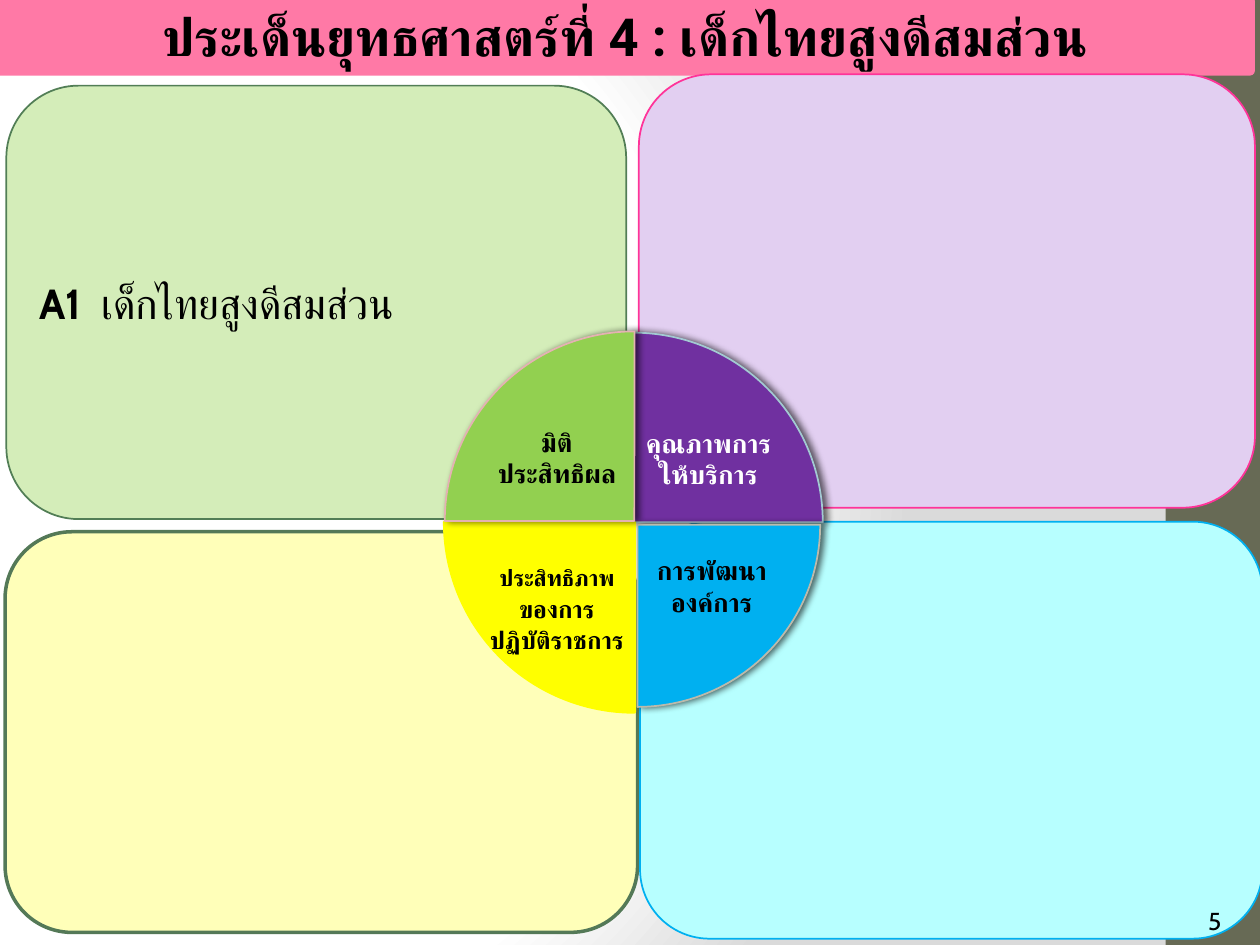
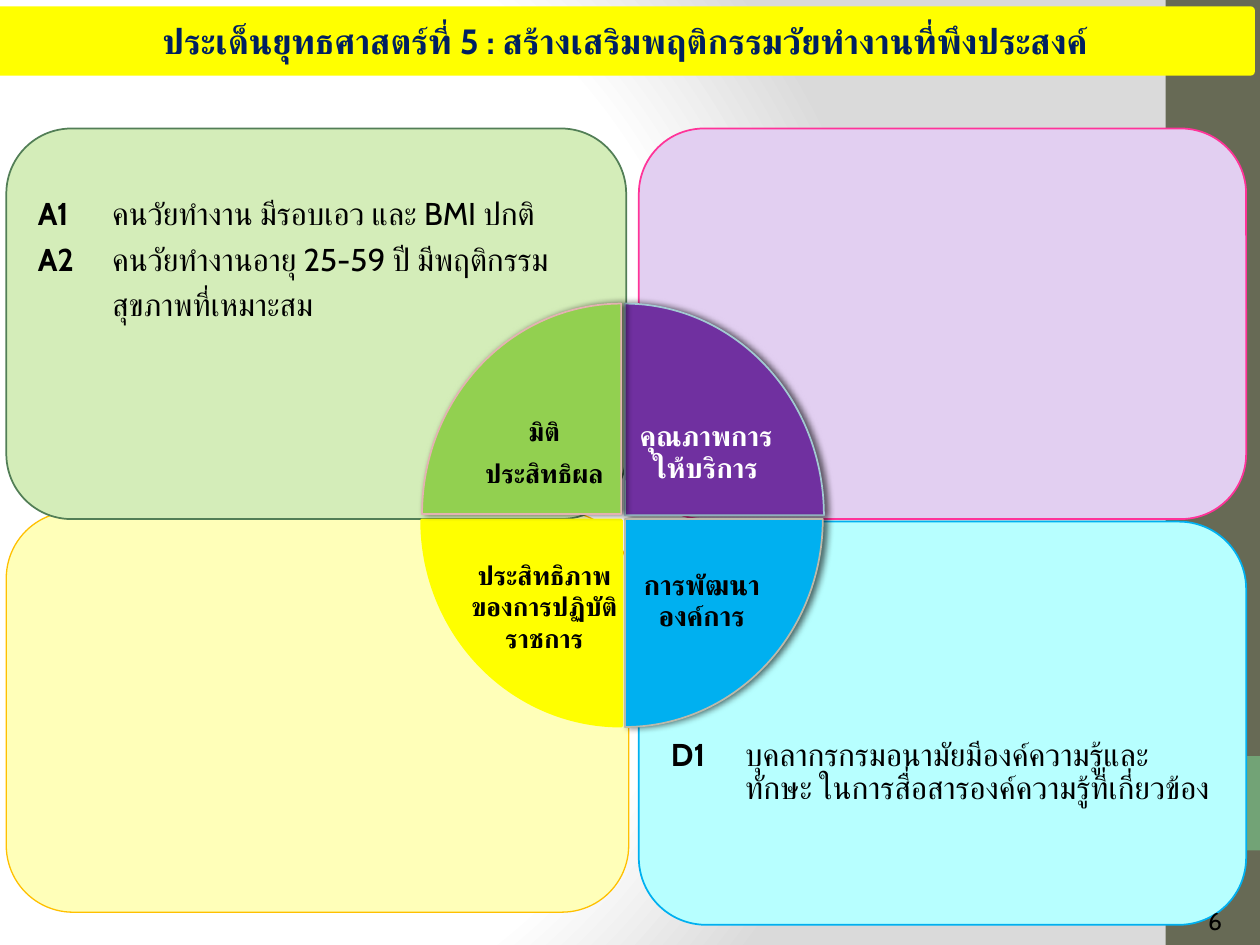
from dataclasses import dataclass
from typing import Optional

from lxml import etree
from pptx import Presentation
from pptx.dml.color import RGBColor
from pptx.enum.shapes import MSO_SHAPE
from pptx.enum.text import MSO_ANCHOR, MSO_AUTO_SIZE, PP_ALIGN
from pptx.oxml import parse_xml
from pptx.oxml.ns import nsdecls, qn
from pptx.util import Inches, Pt

RECTANGLE = MSO_SHAPE.RECTANGLE
ROUNDED = MSO_SHAPE.ROUNDED_RECTANGLE
PIE = MSO_SHAPE.PIE
TOP, MIDDLE = MSO_ANCHOR.TOP, MSO_ANCHOR.MIDDLE
LEFT, CENTER = PP_ALIGN.LEFT, PP_ALIGN.CENTER
NO_AUTOFIT = MSO_AUTO_SIZE.NONE

BLACK = RGBColor(0x00, 0x00, 0x00)
WHITE = RGBColor(0xFF, 0xFF, 0xFF)
NAVY = RGBColor(0x00, 0x20, 0x60)
OLIVE = RGBColor(0x67, 0x6A, 0x55)
SAGE = RGBColor(0x72, 0xA3, 0x76)
PINK = RGBColor(0xFF, 0x79, 0xA6)
HOT_PINK = RGBColor(0xFF, 0x33, 0x99)
YELLOW = RGBColor(0xFF, 0xFF, 0x00)
AMBER = RGBColor(0xFF, 0xC0, 0x00)
CREAM = RGBColor(0xFF, 0xFF, 0xB9)
MOSS = RGBColor(0x54, 0x79, 0x57)
FOREST = RGBColor(0x52, 0x7E, 0x56)
MINT = RGBColor(0xD4, 0xED, 0xB9)
LILAC = RGBColor(0xE2, 0xCF, 0xF1)
ICE = RGBColor(0xB7, 0xFF, 0xFF)
BLUE = RGBColor(0x00, 0xB0, 0xF0)
PURPLE = RGBColor(0x70, 0x30, 0xA0)
GREEN = RGBColor(0x92, 0xD0, 0x50)
PALE_BLUE = RGBColor(0xA3, 0xC9, 0xD3)
STONE = RGBColor(0xBC, 0xBA, 0xAB)
ROSE = RGBColor(0xE4, 0xB2, 0xB2)

SLIDE_WIDTH, SLIDE_HEIGHT = Inches(10), Inches(7.5)
COLUMNS, ROWS = 100, 75
BODY_FONT, HEADLINE_FONT = "Cabin", "Roboto"
TITLE_ONLY = 5
LABEL_HEIGHT = 9


@dataclass(frozen=True)
class Box:
    column: float
    row: float
    columns: float
    rows: float

    def lengths(self) -> tuple[int, int, int, int]:
        return (
            round(SLIDE_WIDTH * self.column / COLUMNS),
            round(SLIDE_HEIGHT * self.row / ROWS),
            round(SLIDE_WIDTH * self.columns / COLUMNS),
            round(SLIDE_HEIGHT * self.rows / ROWS),
        )


@dataclass(frozen=True)
class Style:
    size: float
    color: RGBColor = BLACK
    bold: bool = True
    font: str = BODY_FONT


@dataclass(frozen=True)
class Headline:
    text: str
    box: Box
    fill: RGBColor
    style: Style


@dataclass(frozen=True)
class Panel:
    box: Box
    fill: RGBColor
    line: RGBColor
    line_width: float = 1
    entries: tuple[tuple[str, str], ...] = ()
    size: float = 18
    hanging: float = 0.59
    spacing: Optional[float] = None
    top_inset: Optional[float] = None


@dataclass(frozen=True)
class Quadrant:
    start: int
    end: int
    fill: RGBColor
    line: RGBColor
    line_width: float = 1
    shadow: bool = True
    text_color: RGBColor = BLACK


@dataclass(frozen=True)
class Label:
    center_column: float
    center_row: float
    lines: tuple[tuple[tuple[str, float], ...], ...]


@dataclass(frozen=True)
class StrategyPage:
    number: int
    headline: Headline
    side_blocks: tuple[tuple[Box, RGBColor], ...]
    back_panels: tuple[Panel, ...]
    front_panels: tuple[Panel, ...]
    pie_boxes: tuple[Box, ...]
    labels: tuple[Label, ...]
    label_width: float


QUADRANTS = (
    Quadrant(162, 0, PURPLE, PALE_BLUE, text_color=WHITE),
    Quadrant(0, 54, BLUE, STONE),
    Quadrant(54, 108, YELLOW, YELLOW, line_width=2, shadow=False),
    Quadrant(108, 162, GREEN, ROSE),
)
SIDE_BAND = (Box(92.5, 0, 7.5, 75), OLIVE)
SIDE_ACCENT = (Box(92.5, 60, 7.5, 7.5), SAGE)

PAGES = (
    StrategyPage(
        5,
        Headline("ประเด็นยุทธศาสตร์ที่ 4 : เด็กไทยสูงดีสมส่วน", Box(-0.4, -0.3, 100, 6.3), PINK,
                 Style(30, font=HEADLINE_FONT)),
        (SIDE_BAND,),
        (
            Panel(Box(0.4, 42.2, 50.2, 31.8), CREAM, MOSS, 2),
            Panel(Box(50.8, 41.4, 49.4, 33.1), ICE, BLUE),
        ),
        (
            Panel(Box(50.7, 5.9, 48.9, 34.4), LILAC, HOT_PINK),
            Panel(Box(0.5, 6.8, 49.2, 34.4), MINT, FOREST,
                  entries=(("A1", "เด็กไทยสูงดีสมส่วน"),), size=24, hanging=0.49),
        ),
        (
            Box(35.2, 26.4, 30.1, 30.1),
            Box(36.1, 27.2, 29, 28.9),
            Box(35.3, 26.4, 30.1, 30.1),
            Box(35.3, 26.3, 30.1, 30.1),
        ),
        (
            Label(56.2, 36.4, ((("คุณภาพการให้บริการ", 15),),)),
            Label(56.5, 46.5, ((("การพัฒนาองค์การ", 15),),)),
            Label(44.2, 48.2, ((("ประสิทธิภาพ", 13), ("ของการปฏิบัติราชการ", 14)),)),
            Label(44.2, 36.3, ((("มิติประสิทธิผล", 15),),)),
        ),
        11.1,
    ),
    StrategyPage(
        6,
        Headline("ประเด็นยุทธศาสตร์ที่ 5 : สร้างเสริมพฤติกรรมวัยทำงานที่พึงประสงค์", Box(-0.4, 0.5, 100, 5.5),
                 YELLOW, Style(20, NAVY)),
        (SIDE_BAND, SIDE_ACCENT),
        (
            Panel(Box(0.5, 40.6, 49.4, 31.8), CREAM, AMBER, 0.75),
            Panel(Box(50.7, 41.4, 48.2, 32), ICE, BLUE,
                  entries=(("D1", "บุคลากรกรมอนามัยมีองค์ความรู้และทักษะ ในการสื่อสารองค์ความรู้ที่เกี่ยวข้อง"),),
                  spacing=19, top_inset=1.57),
        ),
        (
            Panel(Box(50.7, 10.2, 48.2, 31), LILAC, HOT_PINK),
            Panel(Box(0.5, 10.2, 49.2, 31), MINT, FOREST,
                  entries=(
                      ("A1", "คนวัยทำงาน มีรอบเอว และ BMI ปกติ"),
                      ("A2", "คนวัยทำงานอายุ 25-59 ปี มีพฤติกรรมสุขภาพที่เหมาะสม"),
                  ),
                  spacing=26, top_inset=0.31),
        ),
        (
            Box(33.8, 24.1, 31.6, 33.6),
            Box(33.9, 24.7, 31.4, 33),
            Box(33.5, 25, 31.6, 32.6),
            Box(33.5, 24.1, 31.6, 33.4),
        ),
        (
            Label(56, 35.9, ((("คุณภาพการให้บริการ", 16),),)),
            Label(55.7, 47.7, ((("การพัฒนาองค์การ", 16),),)),
            Label(43.2, 48.1, ((("ประสิทธิภาพของการปฏิบัติราชการ", 15),),)),
            Label(43.2, 35.9, ((("มิติ", 15),), (("ประสิทธิผล", 15),))),
        ),
        12.7,
    ),
)


def set_background(master) -> None:
    master.background.fill.solid()
    stops = "".join(
        f'<a:gs pos="{position}"><a:srgbClr val="{color}"/></a:gs>'
        for position, color in ((0, "FFFFFF"), (75000, "FFFFFF"), (100000, "DADADA"))
    )
    gradient = parse_xml(
        f'<a:gradFill {nsdecls("a")} rotWithShape="1"><a:gsLst>{stops}</a:gsLst><a:path path="circle">'
        '<a:fillToRect l="20000" t="50000" r="100000" b="50000"/></a:path></a:gradFill>'
    )
    solid = master.element.find(f".//{qn('p:bgPr')}/{qn('a:solidFill')}")
    solid.getparent().replace(solid, gradient)


def add_run(paragraph, text: str, style: Style) -> None:
    run = paragraph.add_run()
    run.text = text
    run.font.name = style.font
    run.font.size = Pt(style.size)
    run.font.bold = style.bold
    run.font.color.rgb = style.color
    latin = run.font._element.find(qn("a:latin"))
    latin.addnext(parse_xml(f'<a:cs {nsdecls("a")} typeface="{style.font}"/>'))


def add_filled_shape(slide, kind, box: Box, fill: RGBColor, line: Optional[RGBColor] = None, width: float = 1):
    shape = slide.shapes.add_shape(kind, *box.lengths())
    shape.shadow.inherit = False
    shape.fill.solid()
    shape.fill.fore_color.rgb = fill
    if line is None:
        shape.line.fill.background()
    else:
        shape.line.color.rgb = line
        shape.line.width = Pt(width)
    return shape


def set_frame(frame, inset: float, anchor) -> None:
    frame.word_wrap = True
    frame.auto_size = NO_AUTOFIT
    frame.vertical_anchor = anchor
    frame.margin_left = frame.margin_right = frame.margin_top = frame.margin_bottom = Inches(inset)


def next_paragraph(frame, index: int):
    return frame.add_paragraph() if index else frame.paragraphs[0]


def add_headline(slide, headline: Headline) -> None:
    band = add_filled_shape(slide, ROUNDED, headline.box, headline.fill)
    band.adjustments[0] = 0.06
    title = slide.shapes.title
    title.left, title.top, title.width, title.height = headline.box.lengths()
    set_frame(title.text_frame, 0, MIDDLE)
    paragraph = title.text_frame.paragraphs[0]
    paragraph.alignment = CENTER
    add_run(paragraph, headline.text, headline.style)
    band._element.addnext(title._element)


def add_panel(slide, panel: Panel) -> None:
    shape = add_filled_shape(slide, ROUNDED, panel.box, panel.fill, panel.line, panel.line_width)
    frame = shape.text_frame
    if panel.top_inset is None:
        set_frame(frame, 0.1, MIDDLE)
    else:
        set_frame(frame, 0.1, TOP)
        frame.margin_top = Inches(panel.top_inset)
    for index, (code, text) in enumerate(panel.entries):
        paragraph = next_paragraph(frame, index)
        paragraph.alignment = LEFT
        if panel.spacing:
            paragraph.line_spacing = Pt(panel.spacing)
        properties = paragraph._p.get_or_add_pPr()
        properties.set("marL", str(Inches(panel.hanging)))
        properties.set("indent", str(-Inches(panel.hanging)))
        add_run(paragraph, f"{code}\t", Style(panel.size))
        add_run(paragraph, text, Style(panel.size, bold=False))


def add_shadow(shape) -> None:
    effects = shape._element.spPr.find(qn("a:effectLst"))
    shadow = etree.SubElement(effects, qn("a:outerShdw"), blurRad=str(Pt(4)), dist=str(Pt(2)), dir="0")
    color = etree.SubElement(shadow, qn("a:srgbClr"), val=str(BLACK))
    etree.SubElement(color, qn("a:alpha"), val="60000")


def add_quadrant(slide, quadrant: Quadrant, box: Box, label: Label, label_width: float) -> None:
    pie = add_filled_shape(slide, PIE, box, quadrant.fill, quadrant.line, quadrant.line_width)
    pie.adjustments[0], pie.adjustments[1] = quadrant.start, quadrant.end
    if quadrant.shadow:
        add_shadow(pie)
    label_box = Box(label.center_column - label_width / 2, label.center_row - LABEL_HEIGHT / 2,
                    label_width, LABEL_HEIGHT)
    frame = slide.shapes.add_textbox(*label_box.lengths()).text_frame
    set_frame(frame, 0.02, MIDDLE)
    for index, line in enumerate(label.lines):
        paragraph = next_paragraph(frame, index)
        paragraph.alignment = CENTER
        paragraph.line_spacing = Pt(18)
        paragraph.space_before = Pt(6 if index else 0)
        for text, size in line:
            add_run(paragraph, text, Style(size, quadrant.text_color))


def add_page_number(slide, number: int) -> None:
    frame = slide.shapes.add_textbox(*Box(94.9, 71.4, 5.1, 3.4).lengths()).text_frame
    frame.word_wrap = True
    add_run(frame.paragraphs[0], str(number), Style(14, bold=False))


def add_page(presentation, page: StrategyPage) -> None:
    slide = presentation.slides.add_slide(presentation.slide_layouts[TITLE_ONLY])
    for box, color in page.side_blocks:
        add_filled_shape(slide, RECTANGLE, box, color)
    for panel in page.back_panels:
        add_panel(slide, panel)
    add_headline(slide, page.headline)
    for panel in page.front_panels:
        add_panel(slide, panel)
    for quadrant, box, label in zip(QUADRANTS, page.pie_boxes, page.labels):
        add_quadrant(slide, quadrant, box, label, page.label_width)
    add_page_number(slide, page.number)


def main() -> None:
    presentation = Presentation()
    presentation.slide_width, presentation.slide_height = SLIDE_WIDTH, SLIDE_HEIGHT
    set_background(presentation.slide_master)
    for page in PAGES:
        add_page(presentation, page)
    presentation.save("out.pptx")


if __name__ == "__main__":
    main()
